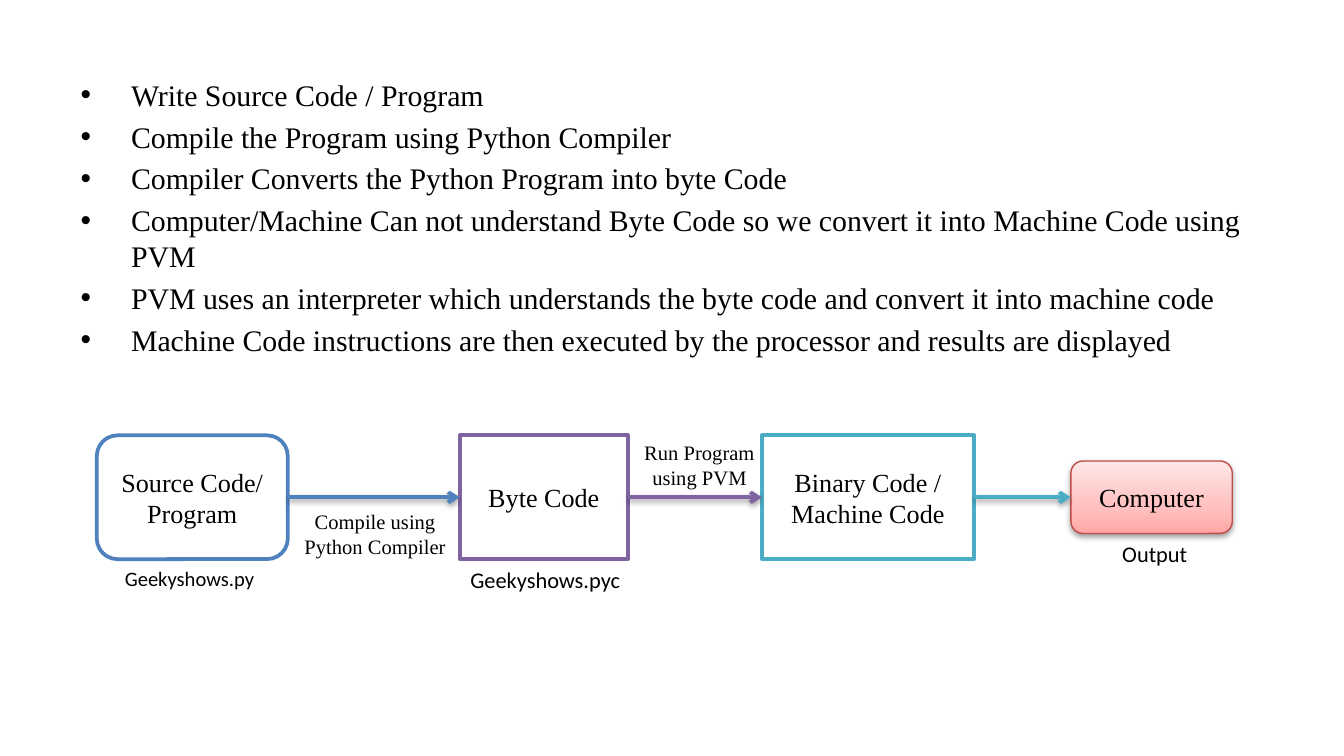
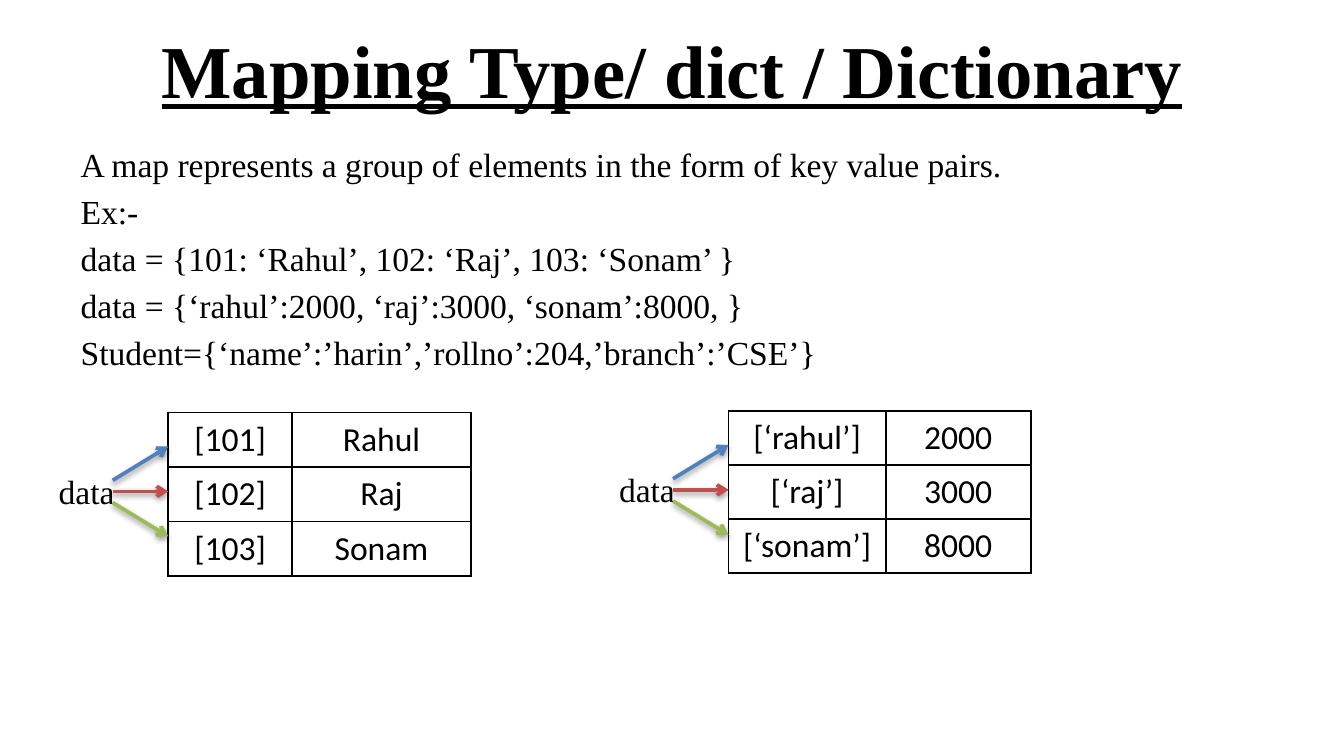
from lxml import etree
from pptx import Presentation
from pptx.dml.color import RGBColor
from pptx.enum.shapes import MSO_CONNECTOR, MSO_SHAPE
from pptx.enum.text import MSO_ANCHOR, MSO_AUTO_SIZE, PP_ALIGN
from pptx.oxml import parse_xml
from pptx.oxml.ns import nsdecls, qn
from pptx.util import Cm, Pt

RECTANGLE = MSO_SHAPE.RECTANGLE
ROUNDED = MSO_SHAPE.ROUNDED_RECTANGLE
STRAIGHT = MSO_CONNECTOR.STRAIGHT
MIDDLE = MSO_ANCHOR.MIDDLE
NO_FIT = MSO_AUTO_SIZE.NONE
GROW = MSO_AUTO_SIZE.SHAPE_TO_FIT_TEXT
LEFT, CENTER = PP_ALIGN.LEFT, PP_ALIGN.CENTER

SERIF, SANS = "Times New Roman", "Calibri"
BLACK, WHITE = "000000", "FFFFFF"
BLUE, RED, GREEN = "4F81BD", "C0504D", "9BBB59"
PURPLE, AQUA, DARK_RED = "8064A2", "4BACC6", "BF4C48"
PINK_STOPS = [(0, "FFA6A5"), (35, "FFC0BF"), (100, "FFE7E7")]

# Layout in centimetres
MARGIN, CONTENT_WIDTH = 1.27, 22.86
FLOW_MIDDLE = 9.4
RIGHT_SITE, LEFT_SITE = 3, 1


def color(value):
    return RGBColor.from_string(value)


class DeckBuilder:
    """Holds the style and the current slide."""

    def __init__(self):
        self.deck = Presentation()
        self.deck.slide_width = Cm(25.4)
        self.deck.slide_height = Cm(14.29)
        self.page = None

    def new_page(self):
        self.page = self.deck.slides.add_slide(self.deck.slide_layouts[1])

    def style(self, frame, size, font=SERIF, align=LEFT):
        for para in frame.paragraphs:
            para.alignment = align
            para.font.name = font
            para.font.size = Pt(size)
            para.font.color.rgb = color(BLACK)

    def place(self, holder, top, height):
        holder.left, holder.top = Cm(MARGIN), Cm(top)
        holder.width, holder.height = Cm(CONTENT_WIDTH), Cm(height)
        holder.text_frame.auto_size = NO_FIT

    def title(self, text=None):
        holder = self.page.shapes.title
        if text is None:
            holder.element.getparent().remove(holder.element)
            return
        self.place(holder, 0.1, 2.39)
        frame = holder.text_frame
        frame.text = text
        frame.vertical_anchor = MIDDLE
        self.style(frame, 40, align=CENTER)
        frame.paragraphs[0].font.bold = True
        frame.paragraphs[0].font.underline = True

    def body(self, lines, top, height, size, bullets=True):
        holder = self.page.placeholders[1]
        self.place(holder, top, height)
        frame = holder.text_frame
        frame.text = "\n".join(lines)
        if not bullets:
            for para in frame.paragraphs:
                properties = para._p.get_or_add_pPr()
                properties.set("marL", "0")
                properties.set("indent", "0")
                etree.SubElement(properties, qn("a:buNone"))
        frame.paragraphs[0].space_before = Pt(0)
        self.style(frame, size)

    def label(self, text, left, top, width, height, size, font=SERIF, align=LEFT):
        box = self.page.shapes.add_textbox(Cm(left), Cm(top), Cm(width), Cm(height))
        frame = box.text_frame
        frame.text = text
        frame.word_wrap = False
        frame.auto_size = GROW
        self.style(frame, size, font, align)

    def step(self, text, left, width, height, outline, kind=RECTANGLE, weight=2):
        """A flow box centred on the flow's middle line."""
        top = FLOW_MIDDLE - height / 2
        box = self.page.shapes.add_shape(kind, Cm(left), Cm(top), Cm(width), Cm(height))
        box.shadow.inherit = False
        box.fill.solid()
        box.fill.fore_color.rgb = color(WHITE)
        box.line.color.rgb = color(outline)
        box.line.width = Pt(weight)
        box.text_frame.text = text
        box.text_frame.word_wrap = True
        box.text_frame.vertical_anchor = MIDDLE
        self.style(box.text_frame, 14, align=CENTER)
        return box

    def gradient(self, box, stops):
        stop_xml = "".join(
            f'<a:gs pos="{position * 1000}"><a:srgbClr val="{value}"/></a:gs>'
            for position, value in stops)
        properties = box.element.spPr
        properties.replace(properties.find(qn("a:solidFill")), parse_xml(
            f'<a:gradFill {nsdecls("a")} rotWithShape="1"><a:gsLst>{stop_xml}</a:gsLst>'
            '<a:lin ang="16200000" scaled="0"/></a:gradFill>'))

    def shadow(self, shape):
        properties = shape.element.spPr
        for effects in properties.findall(qn("a:effectLst")):
            properties.remove(effects)
        properties.append(parse_xml(
            f'<a:effectLst {nsdecls("a")}><a:outerShdw blurRad="40000" dist="20000" '
            f'dir="5400000" rotWithShape="0"><a:srgbClr val="{BLACK}">'
            '<a:alpha val="38000"/></a:srgbClr></a:outerShdw></a:effectLst>'))

    def arrow(self, start, end, stroke):
        line = self.page.shapes.add_connector(STRAIGHT, *map(Cm, (*start, *end)))
        line.line.color.rgb = color(stroke)
        line.line.width = Pt(2)
        outline = line.element.spPr.find(qn("a:ln"))
        etree.SubElement(outline, qn("a:tailEnd"), type="arrow")
        self.shadow(line)
        return line

    def link(self, source, target, stroke):
        line = self.arrow((0, 0), (1, 1), stroke)
        line.begin_connect(source, RIGHT_SITE)
        line.end_connect(target, LEFT_SITE)

    def table(self, rows, left, top, widths, row_height):
        table = self.page.shapes.add_table(
            len(rows), len(widths), Cm(left), Cm(top),
            Cm(sum(widths)), Cm(row_height * len(rows))).table
        table.first_row = False
        table.horz_banding = False
        for column, width in zip(table.columns, widths):
            column.width = Cm(width)
        for row_index, row in enumerate(rows):
            for column_index, text in enumerate(row):
                cell = table.cell(row_index, column_index)
                cell.text = text
                self.style(cell.text_frame, 18, SANS, CENTER)
                self.borders(cell)
                cell.fill.background()

    def borders(self, cell):
        properties = cell._tc.get_or_add_tcPr()
        for side in "LRTB":
            properties.append(parse_xml(
                f'<a:ln{side} {nsdecls("a")} w="12700"><a:solidFill>'
                f'<a:srgbClr val="{BLACK}"/></a:solidFill></a:ln{side}>'))

    def dictionary(self, rows, left, top, widths):
        """A key and value table with a label and an arrow to each row."""
        self.table(rows, left, top, widths, 1.02)
        self.label("data", left - 2.32, top + 0.97, 1.57, 1.02, 18)
        middle = top + 1.49
        for offset, stroke in zip((-1, 0, 1), (BLUE, RED, GREEN)):
            self.arrow((left - 1.05, middle + 0.21 * offset),
                       (left, middle + 0.85 * offset), stroke)


def compile_page(builder):
    builder.new_page()
    builder.title()
    builder.body([
        "Write Source Code / Program",
        "Compile the Program using Python Compiler",
        "Compiler Converts the Python Program into byte Code",
        "Computer/Machine Can not understand Byte Code so we convert it into "
        "Machine Code using PVM",
        "PVM uses an interpreter which understands the byte code and convert it "
        "into machine code",
        "Machine Code instructions are then executed by the processor and results "
        "are displayed",
    ], 1.32, 6.48, 16)

    # Flow boxes
    source = builder.step("Source Code/ Program", 1.83, 3.61, 2.34, BLUE, ROUNDED)
    byte_code = builder.step("Byte Code", 8.69, 3.18, 2.34, PURPLE)
    binary = builder.step("Binary Code / Machine Code", 14.4, 4.01, 2.34, AQUA)
    computer = builder.step("Computer", 20.24, 3.05, 1.37, DARK_RED, ROUNDED, 0.75)
    builder.gradient(computer, PINK_STOPS)
    builder.shadow(computer)

    # Arrows between them
    builder.link(source, byte_code, BLUE)
    builder.link(byte_code, binary, PURPLE)
    builder.link(binary, computer, AQUA)

    # Labels
    builder.label("Compile using\nPython Compiler", 5.49, 9.5, 3.2, 1.19, 11, align=CENTER)
    builder.label("Run Program\nusing PVM", 11.86, 8.2, 2.72, 1.19, 11, align=CENTER)
    builder.label("Geekyshows.py", 2.11, 10.57, 3, 0.74, 11, SANS)
    builder.label("Geekyshows.pyc", 8.64, 10.57, 3.43, 0.76, 12, SANS)
    builder.label("Output", 20.96, 10.08, 1.75, 0.76, 12, SANS)


def mapping_page(builder):
    builder.new_page()
    builder.title("Mapping Type/ dict / Dictionary")
    builder.body([
        "A map represents a group of elements in the form of key value pairs.",
        "Ex:-",
        "data = {101: ‘Rahul’, 102: ‘Raj’, 103: ‘Sonam’ }",
        "data = {‘rahul’:2000, ‘raj’:3000, ‘sonam’:8000, }",
        "Student={‘name’:’harin’,’rollno’:204,’branch’:’CSE’}",
    ], 2.59, 4.78, 18, bullets=False)

    # Tables with their arrows
    builder.dictionary([("[101]", "Rahul"), ("[102]", "Raj"), ("[103]", "Sonam")],
                       3.18, 7.8, (2.34, 3.38))
    builder.dictionary([("[‘rahul’]", "2000"), ("[‘raj’]", "3000"), ("[‘sonam’]", "8000")],
                       13.77, 7.77, (2.97, 2.74))


def main():
    builder = DeckBuilder()
    compile_page(builder)
    mapping_page(builder)
    builder.deck.save("out.pptx")


if __name__ == "__main__":
    main()
